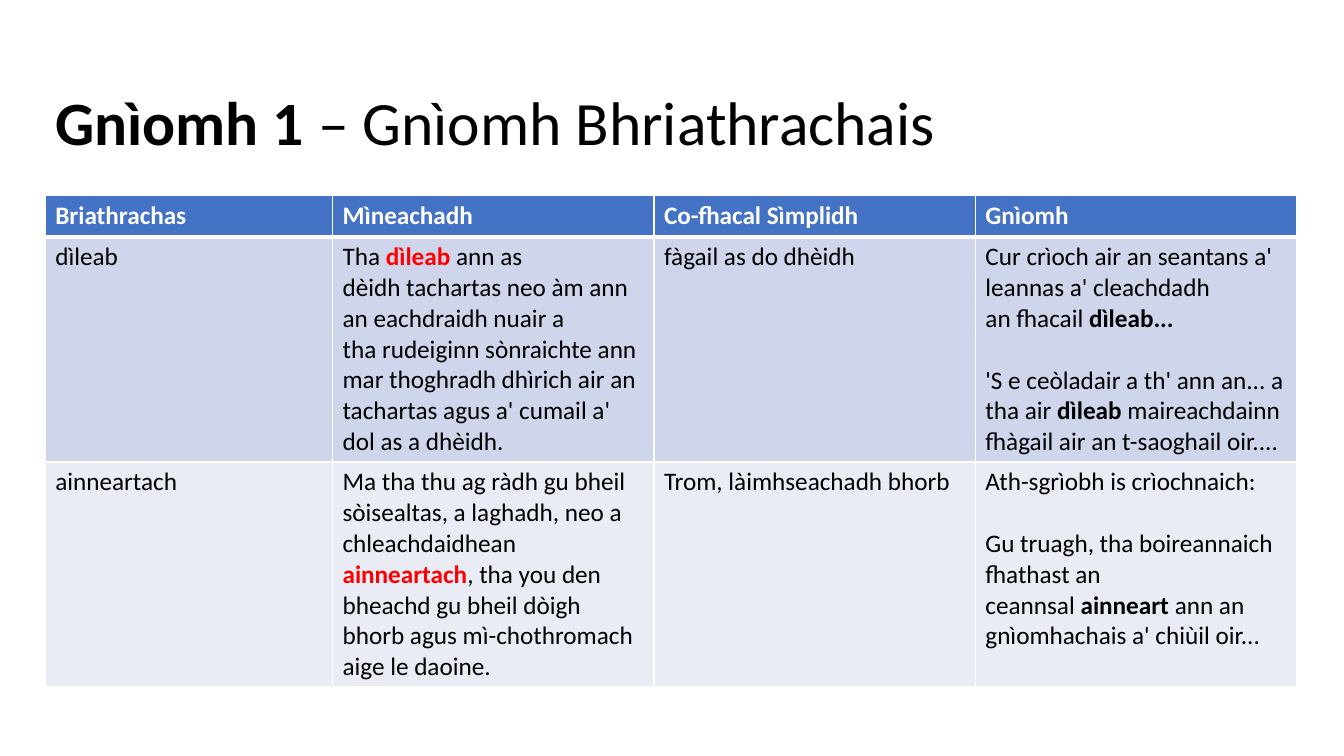
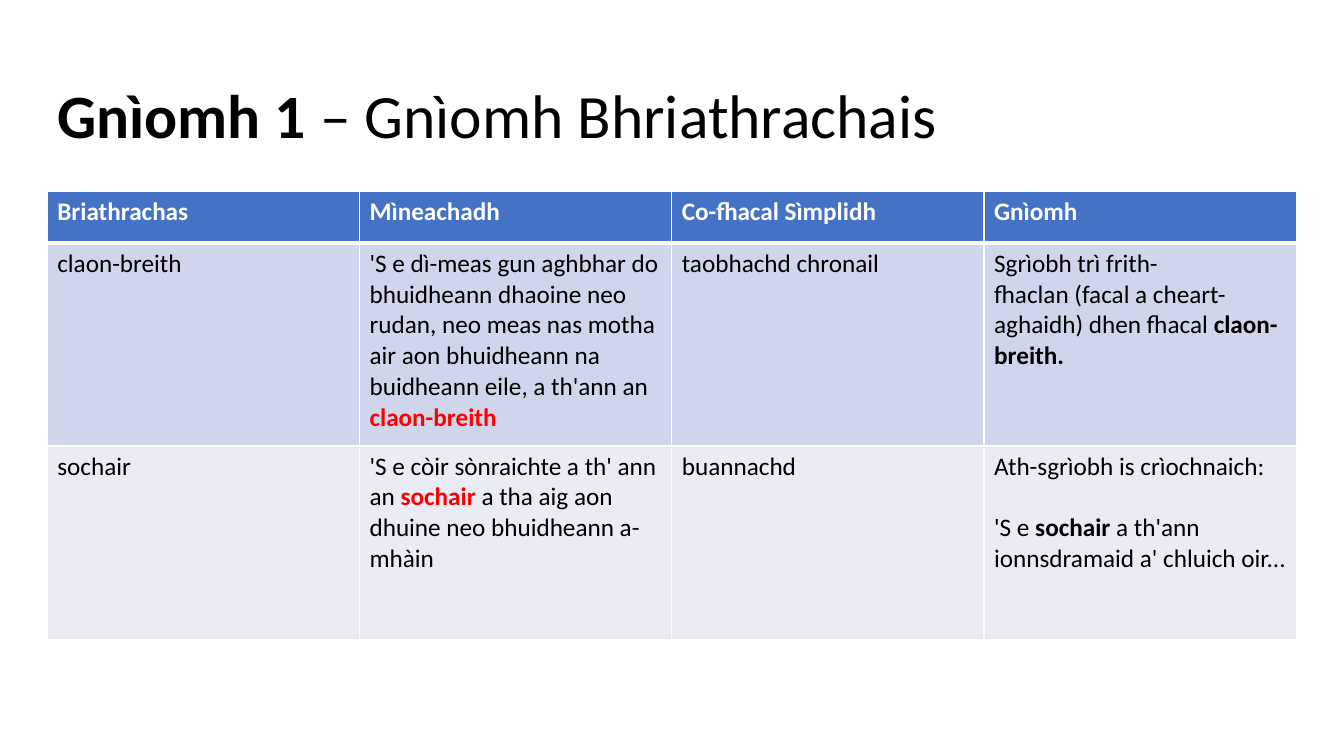
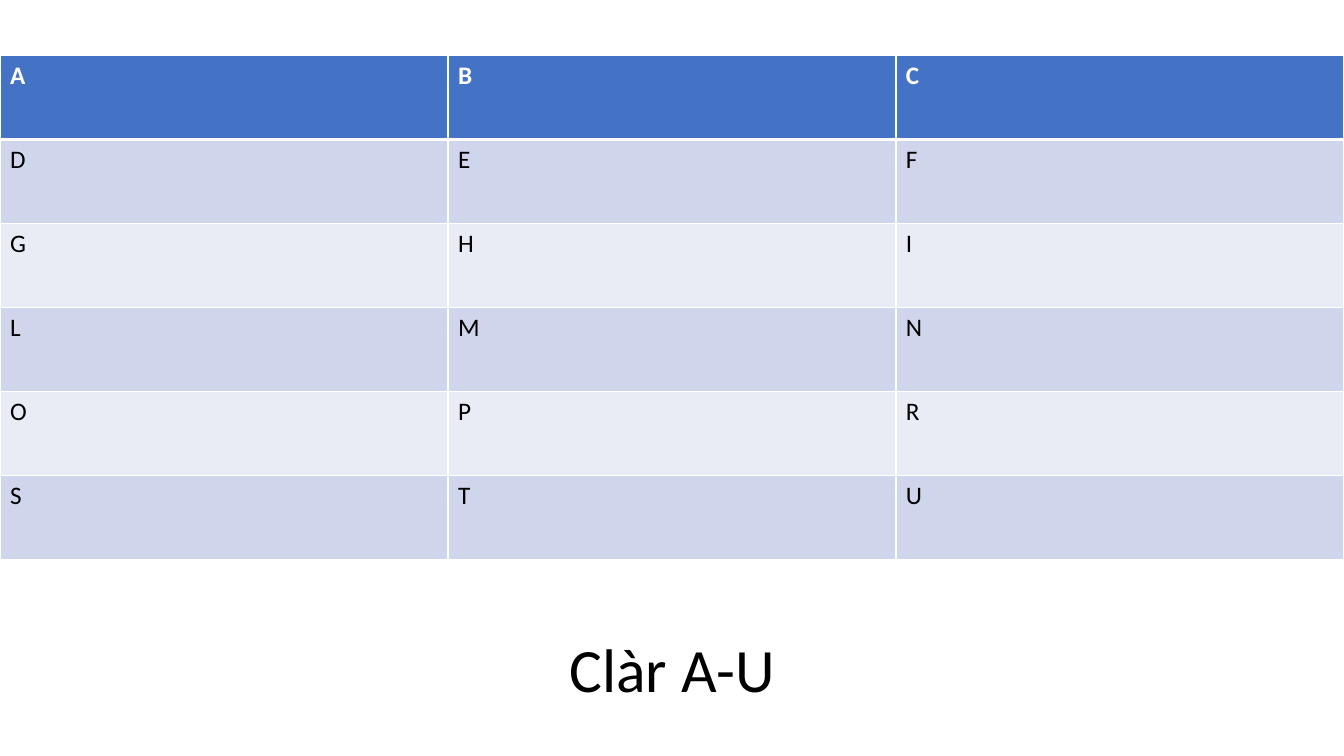
from dataclasses import dataclass
from typing import Sequence

from lxml import etree
from pptx import Presentation
from pptx.dml.color import RGBColor
from pptx.enum import text
from pptx.oxml import ns
from pptx.util import Cm, Pt

# Shared look
BLACK = RGBColor(0x00, 0x00, 0x00)
WHITE = RGBColor(0xFF, 0xFF, 0xFF)
RED = RGBColor(0xFF, 0x00, 0x00)
HEADER_BLUE = RGBColor(0x44, 0x72, 0xC4)
BANDS = (RGBColor(0xE9, 0xEB, 0xF5), RGBColor(0xCF, 0xD5, 0xEA))
FONT = "Calibri"
TITLE_SIZE, BODY_SIZE = Pt(44), Pt(18)
PARAGRAPH_GAP = Pt(22)
THIN, THICK = Pt(1), Pt(3)

SLIDE_W, SLIDE_H = 33.87, 19.05
ACTIVITY_TITLE = "*Gnìomh~1* –~Gnìomh Bhriathrachais"
HEADERS = ("Briathrachas", "Mìneachadh", "Co-fhacal Sìmplidh", "Gnìomh")
MEANING_COL = HEADERS.index("Mìneachadh")


@dataclass
class Title:
    """Wording and box of a title, in cm."""
    words: str
    left: float
    top: float
    width: float = 29.21
    height: float = 3.68
    align: text.PP_ALIGN = text.PP_ALIGN.LEFT
    anchor: text.MSO_ANCHOR = text.MSO_ANCHOR.MIDDLE
    line_spacing: float = 0.9


@dataclass
class Grid:
    """Position, column widths, row heights (cm) and cell wording."""
    left: float
    top: float
    cols: Sequence[float]
    rows: Sequence[float]
    cells: Sequence[Sequence[str]]
    red_col: int = -1


# In the wording, *...* is emphasis, ~ a no-break space, a line end a new paragraph
def write(tf, words: str, size: Pt, color: RGBColor = BLACK,
          strong: RGBColor = BLACK, bold: bool = False) -> None:
    for i, line in enumerate(words.split("\n")):
        p = tf.paragraphs[0] if i == 0 else tf.add_paragraph()
        if i:
            p.space_before = PARAGRAPH_GAP
        for j, part in enumerate(line.split("*")):
            if not part:
                continue
            emphasised = j % 2 == 1
            r = p.add_run()
            r.text = part.replace("~", chr(160))
            look = {"name": FONT, "size": size, "bold": bold or emphasised}
            for key, value in look.items():
                setattr(r.font, key, value)
            r.font.color.rgb = strong if emphasised else color


def set_borders(cell, top: int, bottom: int) -> None:
    tc_pr = cell._tc.get_or_add_tcPr()
    for side, width in {"L": THIN, "R": THIN, "T": top, "B": bottom}.items():
        ln = etree.SubElement(tc_pr, ns.qn(f"a:ln{side}"), w=str(int(width)))
        fill = etree.SubElement(ln, ns.qn("a:solidFill"))
        etree.SubElement(fill, ns.qn("a:srgbClr"), val=str(WHITE))


def add_title(slide, title: Title) -> None:
    sp = slide.shapes.add_textbox(Cm(title.left), Cm(title.top),
                                  Cm(title.width), Cm(title.height))
    tf = sp.text_frame
    for key, value in {"word_wrap": True, "vertical_anchor": title.anchor}.items():
        setattr(tf, key, value)
    write(tf, title.words, TITLE_SIZE)
    p = tf.paragraphs[0]
    for key, value in {"alignment": title.align,
                       "line_spacing": title.line_spacing}.items():
        setattr(p, key, value)


def add_grid(slide, grid: Grid) -> None:
    table = slide.shapes.add_table(
        len(grid.rows), len(grid.cols), Cm(grid.left), Cm(grid.top),
        Cm(sum(grid.cols)), Cm(sum(grid.rows))).table
    table.first_row = table.horz_banding = False
    for col, width in zip(table.columns, grid.cols):
        col.width = Cm(width)
    for i, (row, height) in enumerate(zip(table.rows, grid.rows)):
        row.height = Cm(height)
        header = i == 0
        for j, cell in enumerate(row.cells):
            set_borders(cell, THICK if i == 1 else THIN, THICK if header else THIN)
            cell.fill.solid()
            cell.fill.fore_color.rgb = HEADER_BLUE if header else BANDS[i % 2]
            write(cell.text_frame, grid.cells[i][j], BODY_SIZE,
                  color=WHITE if header else BLACK,
                  strong=RED if j == grid.red_col else BLACK, bold=header)


# Slide contents
SLIDES = (
    (Title(ACTIVITY_TITLE, 1.14, 1.32),
     Grid(1.14, 4.93, (7.24, 8.1, 8.1, 8.1), (1.04, 5.67, 5.67), (
         HEADERS,
         ("dìleab",
          "Tha~*dìleab~*ann as dèidh~tachartas neo àm ann an eachdraidh nuair a "
          "tha~rudeiginn~sònraichte~ann mar thoghradh dhìrich~air an tachartas "
          "agus a' cumail a' dol as a dhèidh.",
          "fàgail as do dhèidh",
          "Cur crìoch air an seantans a' leannas~a' cleachdadh an~fhacail "
          "*dìleab...*\n'S e ceòladair a th' ann an... a tha air *dìleab~*"
          "maireachdainn fhàgail~air an t-saoghail oir...."),
         ("ainneartach",
          "Ma tha thu~ag ràdh gu bheil sòisealtas, a laghadh, neo a "
          "chleachdaidhean *ainneartach*, tha you den bheachd gu bheil dòigh "
          "bhorb agus mì-chothromach aige le daoine.",
          "Trom, làimhseachadh bhorb",
          "Ath-sgrìobh is crìochnaich:\nGu truagh, tha boireannaich "
          "fhathast~an ceannsal~*ainneart *ann an gnìomhachais a' chiùil oir..."),
     ), MEANING_COL)),
    (Title(ACTIVITY_TITLE, 1.19, 1.14),
     Grid(1.19, 4.83, (7.87,) * 4, (1.3, 5.11, 4.88), (
         HEADERS,
         ("claon-breith",
          "'S e dì-meas~gun aghbhar~do bhuidheann dhaoine neo rudan, neo meas "
          "nas motha air aon bhuidheann~na buidheann eile, a th'ann an "
          "*claon-breith*",
          "taobhachd~chronail",
          "Sgrìobh trì frith-fhaclan~(facal~a~cheart-aghaidh)~dhen~fhacal~"
          "*claon-breith.*"),
         ("sochair",
          "'S e còir sònraichte a th' ann an *sochair *a tha aig aon dhuine neo "
          "bhuidheann a-mhàin",
          "buannachd",
          "Ath-sgrìobh~is~crìochnaich:\n'S e *sochair *a th'ann ionnsdramaid "
          "a' chluich oir..."),
     ), MEANING_COL)),
    (Title("Clàr A-U", 13.13, 15.77, 7.62, 2.13, text.PP_ALIGN.CENTER,
           text.MSO_ANCHOR.TOP, 1.0),
     Grid(0, 1.4, (SLIDE_W / 3,) * 3, (12.7 / 6,) * 6,
          ("ABC", "DEF", "GHI", "LMN", "OPR", "STU"))),
)


def main() -> None:
    prs = Presentation()
    prs.slide_width, prs.slide_height = Cm(SLIDE_W), Cm(SLIDE_H)
    for title, grid in SLIDES:
        slide = prs.slides.add_slide(prs.slide_layouts[6])
        add_title(slide, title)
        add_grid(slide, grid)
    prs.save("out.pptx")


if __name__ == "__main__":
    main()
